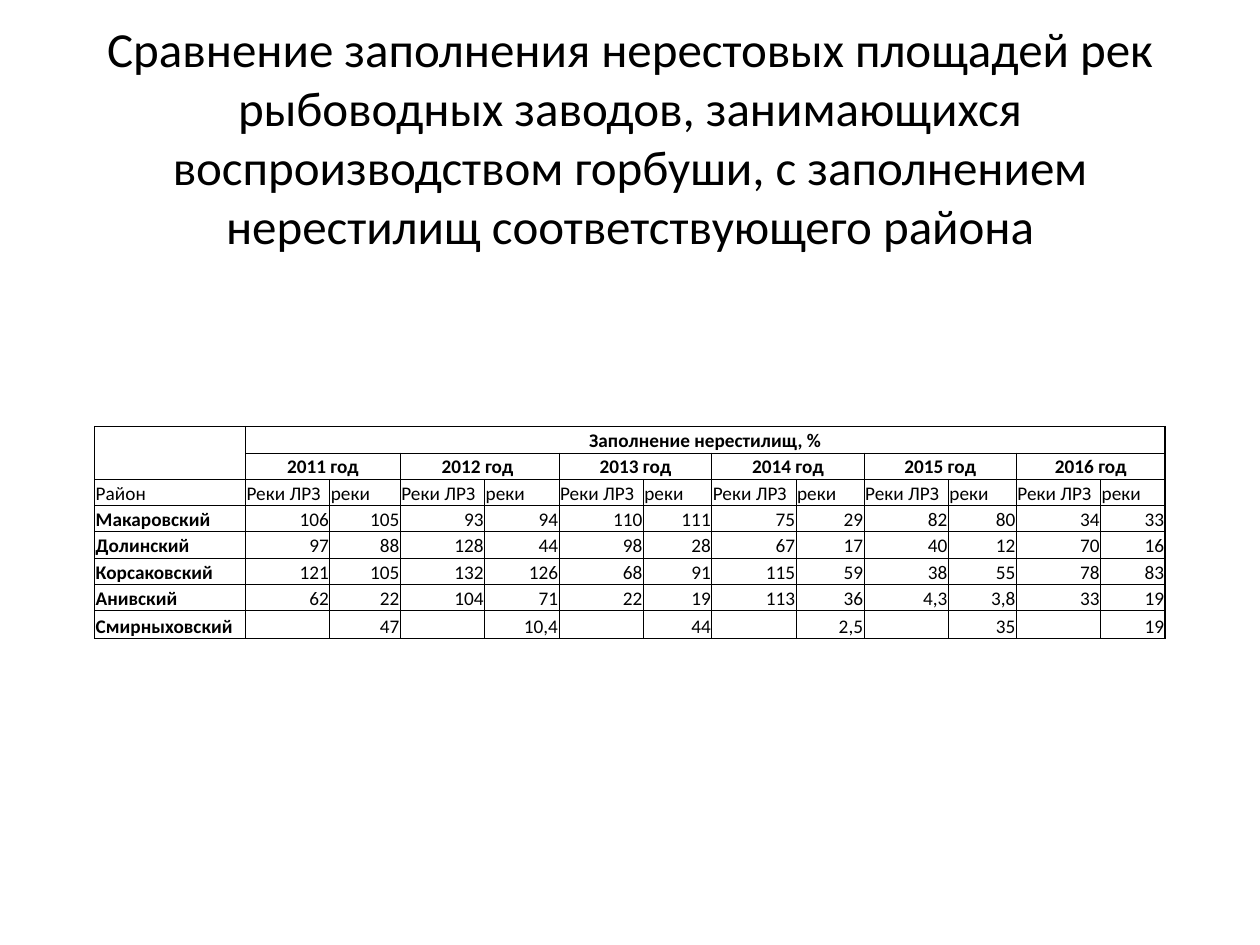
"""Build a slide comparing how full the spawning grounds of hatchery rivers and districts are."""
from lxml import etree
from pptx import Presentation
from pptx.dml.color import RGBColor
from pptx.enum.text import MSO_ANCHOR, PP_ALIGN
from pptx.oxml.ns import qn
from pptx.util import Cm, Pt

LEFT, CENTER, RIGHT = PP_ALIGN.LEFT, PP_ALIGN.CENTER, PP_ALIGN.RIGHT
MIDDLE, BOTTOM = MSO_ANCHOR.MIDDLE, MSO_ANCHOR.BOTTOM
BLACK = "000000"
TITLE = ("Сравнение заполнения нерестовых площадей рек рыбоводных заводов, "
         "занимающихся воспроизводством горбуши, с заполнением нерестилищ "
         "соответствующего района")
YEARS = ["2011 год", "2012 год ", "2013 год", "2014 год", "2015 год", "2016 год"]
DISTRICTS = [
    ["Макаровский", "106", "105", "93", "94", "110", "111", "75", "29", "82", "80", "34", "33"],
    ["Долинский", "97", "88", "128", "44", "98", "28", "67", "17", "40", "12", "70", "16"],
    ["Корсаковский", "121", "105", "132", "126", "68", "91", "115", "59", "38", "55", "78", "83"],
    ["Анивский", "62", "22", "104", "71", "22", "19", "113", "36", "4,3", "3,8", "33", "19"],
    ["Смирныховский", "", "47", "", "10,4", "", "44", "", "2,5", "", "35", "", "19"],
]
RIVER_WIDTHS = [1.42, 1.5, 1.38, 1.37, 1.37, 1.3]
CELL_FORMAT = {"margin_left": Cm(0.02), "margin_right": Cm(0.02), "margin_top": Cm(0.02),
               "margin_bottom": Cm(0), "vertical_anchor": BOTTOM}


def write(p, text, size, bold, align):
    p.alignment = align
    if not text:
        etree.SubElement(p._p, qn("a:endParaRPr"), sz=str(size * 100))
        return
    r = p.add_run()
    r.text = text
    for name, value in {"name": "Calibri", "size": Pt(size), "bold": bold}.items():
        setattr(r.font, name, value)
    r.font.color.rgb = RGBColor.from_string(BLACK)


def set_borders(cell, widths):
    tcPr = cell._tc.get_or_add_tcPr()
    for i, (side, width) in enumerate(widths.items()):
        ln = etree.Element(qn(f"a:ln{side}"), w=str(Pt(width)))
        fill = etree.SubElement(ln, qn("a:solidFill"))
        etree.SubElement(fill, qn("a:srgbClr"), val=BLACK)
        tcPr.insert(i, ln)


prs = Presentation()
prs.slide_width, prs.slide_height = Cm(25.4), Cm(19.05)
s = prs.slides.add_slide(prs.slide_layouts[6])

tf = s.shapes.add_textbox(Cm(1.27), Cm(0.17), Cm(22.86), Cm(5.16)).text_frame
tf.word_wrap = True
tf.vertical_anchor = MIDDLE
write(tf.paragraphs[0], TITLE, 28, False, CENTER)

rows = [["", "Заполнение нерестилищ, %"] + [""] * 11,
        [""] + [text for year in YEARS for text in (year, "")],
        ["Район"] + ["Реки ЛРЗ", "реки"] * len(YEARS)] + DISTRICTS
widths = [3.04] + [w for river in RIVER_WIDTHS for w in (1.7, river)]
heights = [0.53] * 7 + [0.56]
last_row, last_col = len(rows) - 1, len(widths) - 1

tbl = s.shapes.add_table(len(rows), len(widths), Cm(1.91), Cm(8.6),
                         Cm(sum(widths)), Cm(sum(heights))).table
tbl.first_row = tbl.horz_banding = False
for col, width in zip(tbl.columns, widths):
    col.width = Cm(width)
for row, height in zip(tbl.rows, heights):
    row.height = Cm(height)

tbl.cell(0, 0).merge(tbl.cell(1, 0))
tbl.cell(0, 1).merge(tbl.cell(0, last_col))
for j in range(1, last_col, 2):
    tbl.cell(1, j).merge(tbl.cell(1, j + 1))

for i, row in enumerate(rows):
    for j, text in enumerate(row):
        cell = tbl.cell(i, j)
        for name, value in CELL_FORMAT.items():
            setattr(cell, name, value)
        cell.fill.background()
        set_borders(cell, {
            "L": 1 if j == 0 else 0.5,
            "R": 1 if j + cell.span_width > last_col else 0.5,
            "T": 1 if i == 0 else 0.5,
            "B": 1 if i == last_row else 0.5,
        })
        align = CENTER if i < 2 else LEFT if i == 2 or j == 0 else RIGHT
        bold = i < 2 or (i > 2 and j == 0)
        write(cell.text_frame.paragraphs[0], text, 11, bold, align)

prs.save("out.pptx")
